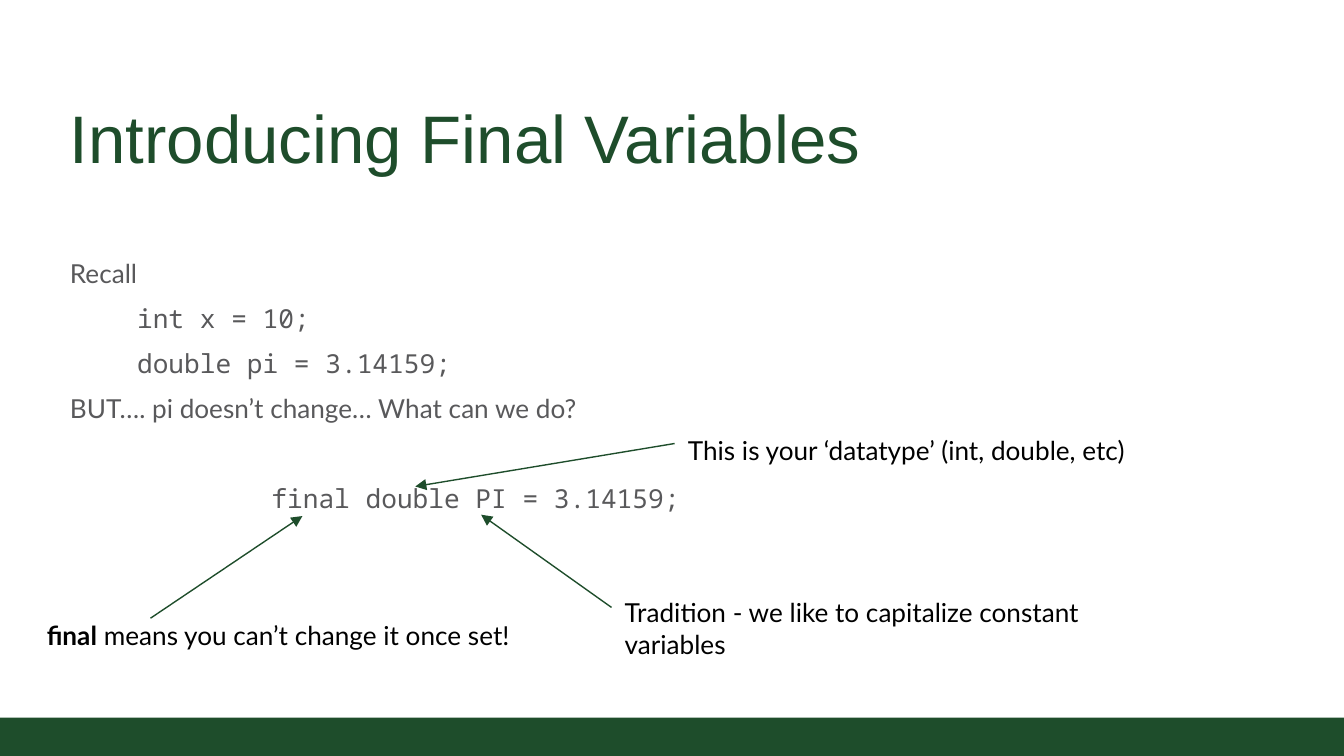
import pptx
import pptx.util
import pptx.dml.color
import pptx.enum.shapes
import pptx.enum.text
import pptx.oxml.ns
import lxml.etree

INK = {"green": "1E4D2B", "gray": "59595B", "black": "000000"}
SANS, CODE = "Lato", "Noto Sans Mono"
WIDE = 10
HIGH = WIDE * 9 / 16


def inches(box):
    return [pptx.util.Inches(size) for size in box]


def color(name):
    return pptx.dml.color.RGBColor.from_string(INK[name])


def style(run, face, size, ink):
    run.font.name = face
    run.font.size = pptx.util.Pt(size)
    run.font.color.rgb = color(ink)


def frame(slide, box, inset):
    area = slide.shapes.add_textbox(*inches(box)).text_frame
    area.word_wrap = True
    area.margin_left = area.margin_right = pptx.util.Inches(inset)
    area.margin_top = area.margin_bottom = pptx.util.Inches(inset)
    return area


def footer(slide, box):
    bar = slide.shapes.add_shape(
        pptx.enum.shapes.MSO_SHAPE.RECTANGLE, *inches(box))
    bar.shadow.inherit = False
    bar.fill.solid()
    bar.fill.fore_color.rgb = color("green")
    bar.line.fill.background()


def title(slide, box, text):
    area = frame(slide, box, 0.07)
    area.vertical_anchor = pptx.enum.text.MSO_ANCHOR.BOTTOM
    area.text = text
    style(area.paragraphs[0].runs[0], "Arial", 36, "green")


def body(slide, box, rows):
    area = frame(slide, box, 0.07)
    area.text = "\n".join(row[0] for row in rows)
    for para, (text, face, left, first, gap) in zip(area.paragraphs, rows):
        props = para._p.get_or_add_pPr()
        props.set("marL", str(pptx.util.Inches(left)))
        props.set("indent", str(pptx.util.Inches(first)))
        para.line_spacing = 1.2
        para.space_before = pptx.util.Pt(gap)
        style(para.runs[0], face, 14, "gray")


def arrow(slide, start, end):
    link = slide.shapes.add_connector(
        pptx.enum.shapes.MSO_CONNECTOR.STRAIGHT, *inches(start + end))
    link.line.color.rgb = color("green")
    link.line.width = pptx.util.Pt(0.75)
    props = link._element.spPr
    name = pptx.oxml.ns.qn
    tip = lxml.etree.SubElement(props.find(name("a:ln")), name("a:tailEnd"))
    tip.set("type", "triangle")
    lxml.etree.SubElement(props, name("a:effectLst"))


def note(slide, box, parts, shift, end):
    area = frame(slide, box, 0.1)
    for text, bold in parts:
        run = area.paragraphs[0].add_run()
        run.text = text
        run.font.bold = bold
        style(run, SANS, 14, "black")
    arrow(slide, (box[0] + shift[0], box[1] + shift[1]), end)


def main():
    deck = pptx.Presentation()
    deck.slide_width, deck.slide_height = inches((WIDE, HIGH))
    slide = deck.slides.add_slide(deck.slide_layouts[6])
    footer(slide, (0, 5.34, WIDE, HIGH - 5.34))
    title(slide, (0.45, 0.66, 9.09, 0.73), "Introducing Final Variables")
    body(slide, (0.45, 1.8, 9.09, 2.2), [
        ("Recall", SANS, 0, 0, 0),
        ("int x = 10;", CODE, 0, 0.5, 4),
        ("double pi = 3.14159;", CODE, 0, 0.5, 4),
        ("BUT…. pi doesn’t change… What can we do?", SANS, 0, 0, 4),
        ("final double PI = 3.14159;", CODE, 1, 0.5, 28),
    ])
    note(slide, (0.25, 4.51, 3.7, 0.46),
         [("final", True), (" means you can’t change it once set!", False)],
         (0.87, 0.09), (2.25, 3.84))
    note(slide, (5.02, 3.13, 3.94, 0.35),
         [("This is your ‘datatype’ (int, double, etc)", False)],
         (0, 0.17), (3.09, 3.62))
    note(slide, (4.55, 4.34, 3.94, 0.35),
         [("Tradition - we like to capitalize constant variables", False)],
         (0, 0.18), (3.58, 3.83))
    deck.save("out.pptx")


if __name__ == "__main__":
    main()
